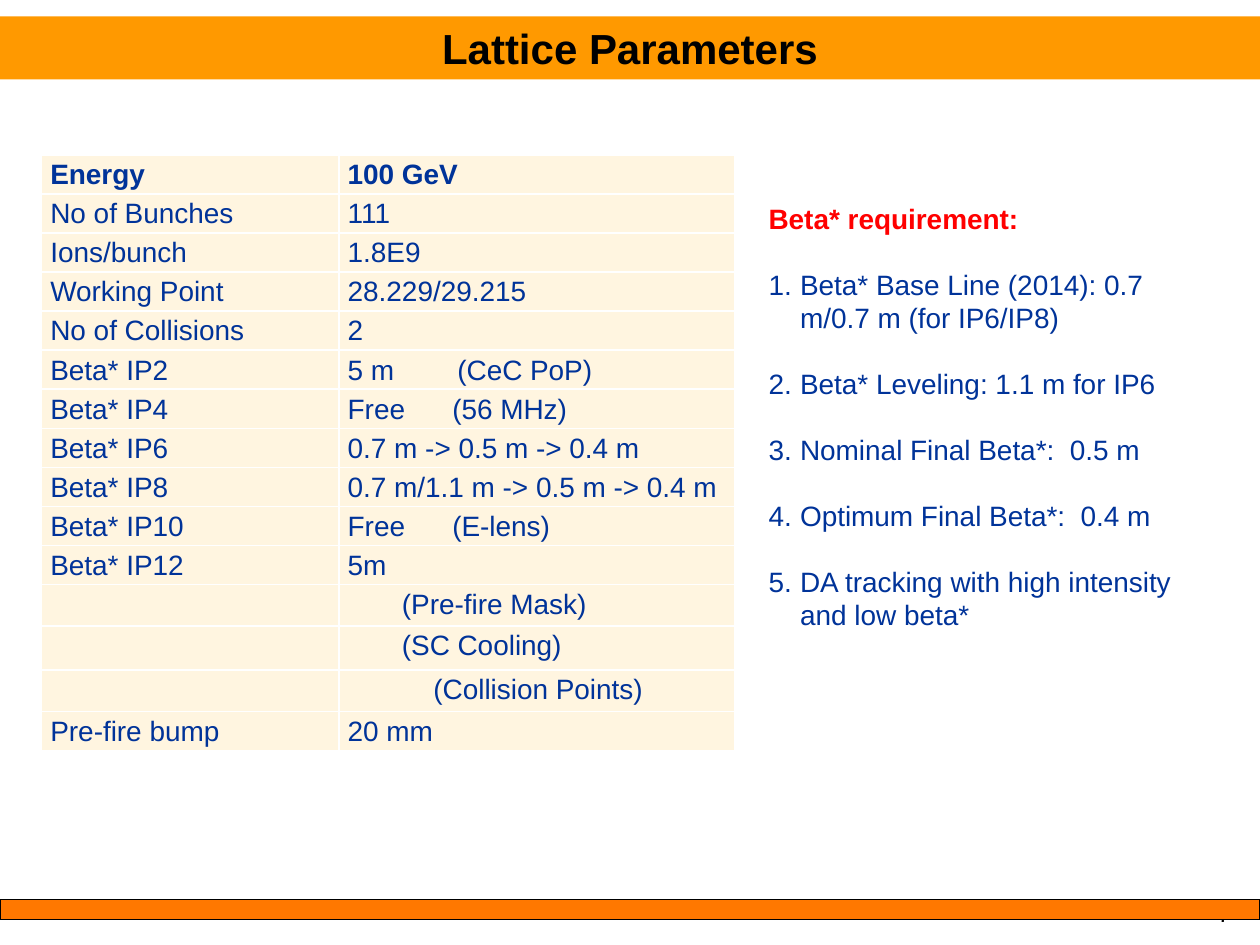
from lxml import etree
from pptx import Presentation
from pptx import util as u
from pptx.dml.color import RGBColor
from pptx.enum import shapes, text
from pptx.oxml import ns

NAVY, RED, BLACK = "003399", "FF0000", "000000"
ORANGE, DARK_ORANGE, CREAM = "FF9900", "FF7800", "FFF5E0"


def colour(value):
    return RGBColor.from_string(value)


def write(para, words, size, shade, bold=False):
    span = para.add_run()
    span.text = words
    font_format = {"name": "Arial", "size": u.Pt(size), "bold": bold}
    for key, value in font_format.items():
        setattr(span.font, key, value)
    span.font.color.rgb = colour(shade)


deck = Presentation()
deck.slide_width, deck.slide_height = u.Inches(10), u.Inches(7.5)
page = deck.slides.add_slide(deck.slide_layouts[1])

number = page.shapes.add_textbox(u.Inches(9.42), u.Inches(7.08), u.Inches(0.5), u.Inches(0.33))
number.text_frame.margin_right = u.Inches(0.15)
para = number.text_frame.paragraphs[0]
para.alignment = text.PP_ALIGN.RIGHT
write(para, "7", 14, BLACK)

footer = page.shapes.add_shape(
    shapes.MSO_SHAPE.RECTANGLE, 0, u.Inches(7.14), u.Inches(10), u.Inches(0.16))
footer.shadow.inherit = False
footer.fill.solid()
footer.fill.fore_color.rgb = colour(DARK_ORANGE)
footer.line.color.rgb = colour(BLACK)
footer.line.width = u.Pt(0.75)

title = page.shapes.title
body = page.placeholders[1]
places = [(title, (0, 0.13, 10, 0.5)), (body, (6, 1.55, 3.75, 3.6))]
for box, place in places:
    for side, length in zip(("left", "top", "width", "height"), place):
        setattr(box, side, u.Inches(length))
    box.text_frame.word_wrap = True
    box.text_frame.auto_size = text.MSO_AUTO_SIZE.NONE

title.fill.solid()
title.fill.fore_color.rgb = colour(ORANGE)
title.text_frame.vertical_anchor = text.MSO_ANCHOR.MIDDLE
para = title.text_frame.paragraphs[0]
para.alignment = text.PP_ALIGN.CENTER
write(para, "Lattice Parameters", 24, BLACK, True)

rows = [
    ("Energy", "100 GeV", 0),
    ("No of Bunches", "111", 0),
    ("Ions/bunch", "1.8E9", 0),
    ("Working Point", "28.229/29.215", 0),
    ("No of Collisions", "2", 0),
    ("Beta* IP2", "5 m\t(CeC PoP)", 0),
    ("Beta* IP4", "Free\t(56 MHz)", 0),
    ("Beta* IP6", "0.7 m -> 0.5 m -> 0.4 m", 0),
    ("Beta* IP8", "0.7 m/1.1 m -> 0.5 m -> 0.4 m", 0),
    ("Beta* IP10", "Free\t(E-lens)", 0),
    ("Beta* IP12", "5m", 0),
    ("", "(Pre-fire Mask)", 0.43),
    ("", "(SC Cooling)", 0.43),
    ("", "(Collision Points)", 0.68),
    ("Pre-fire bump", "20 mm", 0),
]
tall_rows = {11: 0.33, 12: 0.35, 13: 0.33}
table = page.shapes.add_table(
    len(rows), 2, u.Inches(0.33), u.Inches(1.23), u.Inches(5.5), u.Inches(4.77)).table
table.columns[0].width, table.columns[1].width = u.Inches(2.36), u.Inches(3.14)
cell_format = {"margin_left": u.Inches(0.07), "margin_right": u.Inches(0.07),
               "margin_top": 0, "margin_bottom": 0}

for index, (label, reading, indent) in enumerate(rows):
    table.rows[index].height = u.Inches(tall_rows.get(index, 0.31))
    for column, words in enumerate((label, reading)):
        cell = table.cell(index, column)
        for key, value in cell_format.items():
            setattr(cell, key, value)
        cell.fill.solid()
        cell.fill.fore_color.rgb = colour(CREAM)
        if not words:
            continue
        para = cell.text_frame.paragraphs[0]
        para.line_spacing = 1.15
        properties = para._p.get_or_add_pPr()
        if column and indent:
            properties.set("marL", str(u.Inches(indent)))
        if "\t" in words:
            stops = etree.SubElement(properties, ns.qn("a:tabLst"))
            stop = 0.87 if words.startswith("5 m") else 0.83
            etree.SubElement(stops, ns.qn("a:tab"), pos=str(u.Inches(stop)), algn="l")
        write(para, words, 16, NAVY, index == 0)

requirements = [
    "Beta* Base Line (2014): 0.7 m/0.7 m (for IP6/IP8)",
    "Beta* Leveling: 1.1 m for IP6",
    "Nominal Final Beta*:  0.5 m",
    "Optimum Final Beta*:  0.4 m",
    "DA tracking with high intensity and low beta*",
]
para = body.text_frame.paragraphs[0]
para.space_before = u.Pt(0)
properties = para._p.get_or_add_pPr()
properties.set("marL", "0")
properties.set("indent", "0")
etree.SubElement(properties, ns.qn("a:buNone"))
write(para, "Beta* requirement:", 16, RED, True)
for requirement in requirements:
    para = body.text_frame.add_paragraph()
    para.space_before = u.Pt(18.4)
    properties = para._p.get_or_add_pPr()
    properties.set("marL", str(u.Inches(0.25)))
    properties.set("indent", str(-u.Inches(0.25)))
    etree.SubElement(properties, ns.qn("a:buFont"), typeface="Arial")
    etree.SubElement(properties, ns.qn("a:buAutoNum"), type="arabicPeriod")
    write(para, requirement, 16, NAVY)

deck.save("out.pptx")
